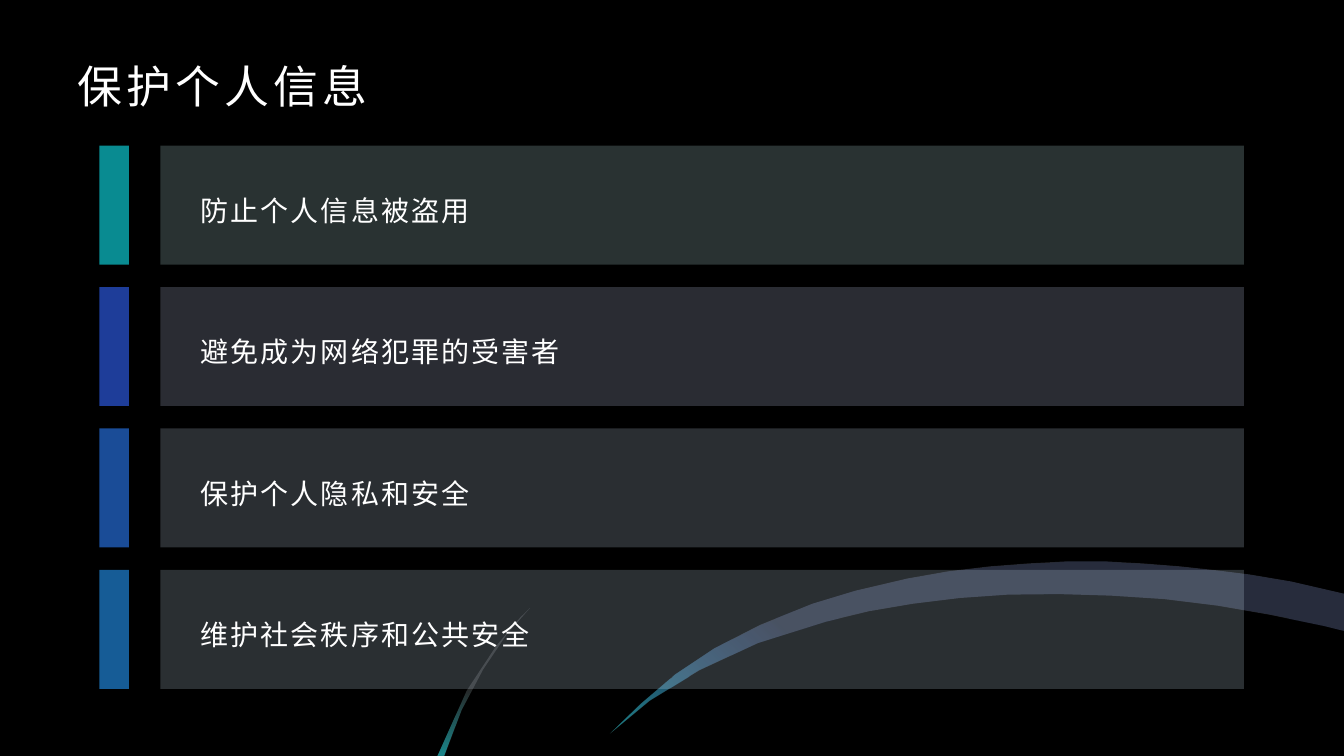
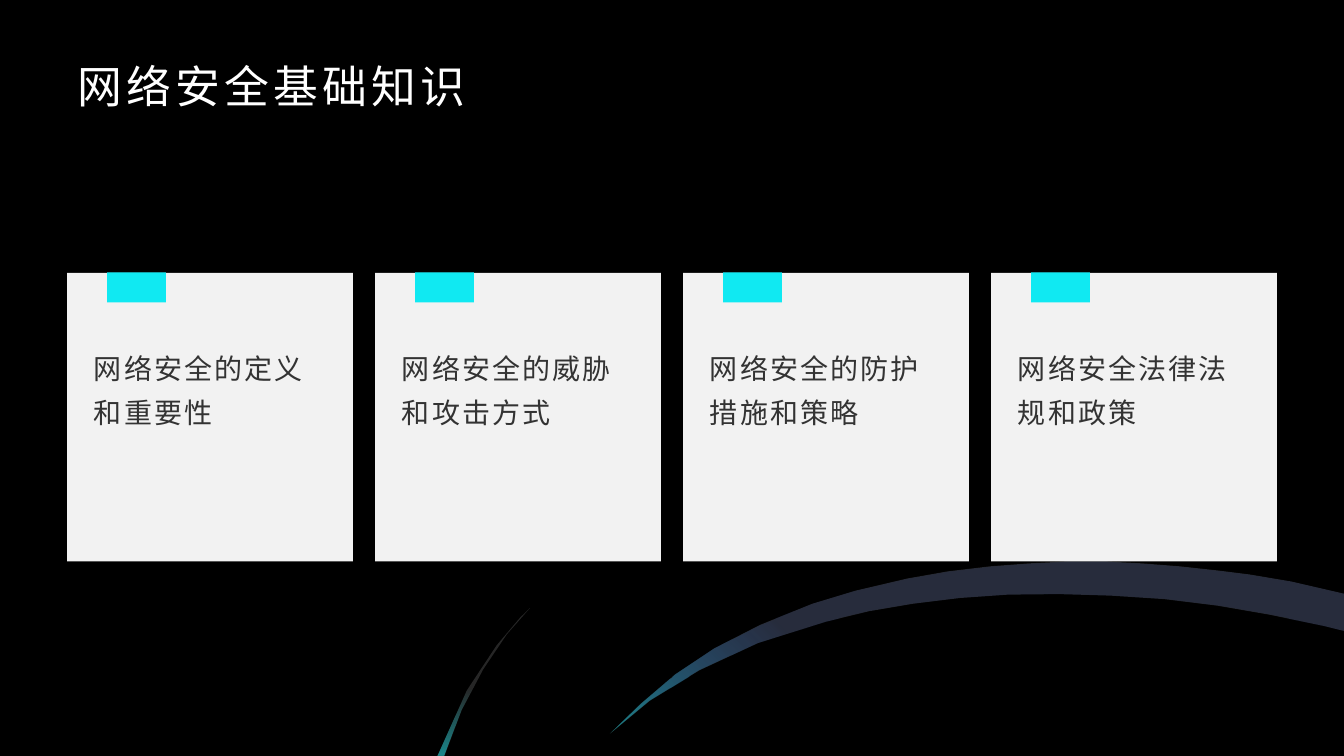
"""Build two slides on network security with a shared dark layout."""
from lxml.etree import SubElement
from pptx import Presentation
from pptx.dml.color import RGBColor
from pptx.enum.shapes import MSO_SHAPE
from pptx.enum.text import MSO_ANCHOR, MSO_AUTO_SIZE, PP_ALIGN
from pptx.oxml.ns import qn
from pptx.util import Pt

BLACK = RGBColor(0x00, 0x00, 0x00)
WHITE = RGBColor(0xFF, 0xFF, 0xFF)
CHARCOAL = RGBColor(0x26, 0x26, 0x26)
INK = RGBColor(0x33, 0x33, 0x33)
CARD_GREY = RGBColor(0xF2, 0xF2, 0xF2)
CYAN = RGBColor(0x10, 0xE9, 0xF2)
BLUE = RGBColor(0x33, 0x66, 0xFF)
SKY = RGBColor(0x2C, 0x80, 0xFC)
AZURE = RGBColor(0x25, 0x9A, 0xFA)
PALE_CYAN = RGBColor(0xCF, 0xFB, 0xFC)
PALE_BLUE = RGBColor(0xD6, 0xE0, 0xFF)
PALE_SKY = RGBColor(0xD5, 0xE6, 0xFE)
PALE_AZURE = RGBColor(0xD3, 0xEB, 0xFE)
GLOW = RGBColor(0x1E, 0xB5, 0xF7)

TITLE_FRAME = {
    "word_wrap": True, "auto_size": MSO_AUTO_SIZE.NONE,
    "vertical_anchor": MSO_ANCHOR.BOTTOM,
    "margin_left": Pt(7.2), "margin_right": Pt(7.2),
    "margin_top": 0, "margin_bottom": 0,
}
TITLE_BOX = {"left": Pt(48), "top": Pt(36), "width": Pt(864), "height": Pt(44.6)}
TITLE_FONT = {"name": "Cabin", "size": Pt(32)}
BODY_FONT = {"name": "Lato", "size": Pt(20)}

WIDE_ARC = [
    (435.6, 524.2), (457.9, 502.6), (482.4, 481.7), (510.5, 463), (542.9, 446.4),
    (580.3, 431.3), (611.3, 421.9), (648, 413.3), (676.8, 408.2), (707, 404.6),
    (734.4, 402.5), (762.5, 401), (789.1, 401), (816.5, 402.5), (843.1, 404.6),
    (869.8, 407.5), (892.8, 410.4), (922.3, 415.4), (960, 424.1),
    (960, 450.7), (945.4, 447.1), (907.2, 439.2), (869.8, 432.7), (831.6, 428),
    (793.4, 425.5), (756.2, 424.4), (720, 424.8), (685.6, 427.2), (652.3, 431.3),
    (620.5, 436.7), (589.7, 444.2), (541.4, 459.4), (499.7, 478.8), (464.4, 500.4),
]
SMALL_ARC = [
    (378.7, 434.2), (362, 453.2), (345.2, 478.1), (329.8, 507.3), (317.5, 540),
    (312.5, 540), (333.4, 493.3), (354.7, 461.1), (371.7, 441),
]


def add_block(slide, color, left, top, width, height, alpha=100):
    block = slide.shapes.add_shape(
        MSO_SHAPE.RECTANGLE, Pt(left), Pt(top), Pt(width), Pt(height))
    block.shadow.inherit = False
    block.fill.solid()
    block.fill.fore_color.rgb = color
    block.line.fill.background()
    if alpha < 100:
        for tone in block.element.spPr.iter(qn("a:srgbClr")):
            SubElement(tone, qn("a:alpha"), val=str(alpha * 1000))


def write(box, text, font, color, tracking, line_spacing=1.0):
    paragraph = box.text_frame.paragraphs[0]
    paragraph.alignment = PP_ALIGN.LEFT
    paragraph.line_spacing = line_spacing
    run = paragraph.add_run()
    run.text = text
    for key, value in font.items():
        setattr(run.font, key, value)
    run.font.color.rgb = color
    for properties in box.element.iter(qn("a:rPr")):
        properties.set("spc", str(tracking))


presentation = Presentation()
presentation.slide_width = Pt(960)
presentation.slide_height = Pt(540)
background = presentation.slide_master.background.fill
background.solid()
background.fore_color.rgb = BLACK
layout = presentation.slide_layouts[5]
for footer in list(layout.placeholders)[1:]:
    footer.element.getparent().remove(footer.element)

slides = []
for heading in ("保护个人信息", "网络安全基础知识"):
    slide = presentation.slides.add_slide(layout)
    title = slide.shapes.title
    for key, value in TITLE_BOX.items():
        setattr(title, key, value)
    for key, value in TITLE_FRAME.items():
        setattr(title.text_frame, key, value)
    write(title, heading, TITLE_FONT, WHITE, 300)
    slides.append(slide)
privacy, basics = slides

arcs = []
for outline, angle, stops in (
    (WIDE_ARC, None, None),
    (SMALL_ARC, None, None),
    (WIDE_ARC, 45, ((0, CYAN, 50), (0.31, BLUE, 10))),
    (SMALL_ARC, 270, ((0.55, CYAN, 0), (1, CYAN, 50))),
):
    points = [(Pt(x), Pt(y)) for x, y in outline]
    builder = privacy.shapes.build_freeform(*points[0])
    builder.add_line_segments(points[1:], close=True)
    arc = builder.convert_to_shape()
    arc.shadow.inherit = False
    arc.line.fill.background()
    if stops:
        arc.fill.gradient()
        arc.fill.gradient_angle = angle
        for stop, (position, color, alpha) in zip(arc.fill.gradient_stops, stops):
            stop.position = position
            stop.color.rgb = color
        tones = list(arc.element.spPr.iter(qn("a:srgbClr")))
        for tone, (position, color, alpha) in zip(tones, stops):
            SubElement(tone, qn("a:alpha"), val=str(alpha * 1000))
    else:
        arc.fill.solid()
        arc.fill.fore_color.rgb = CHARCOAL
    arcs.append(arc)

effects = arcs[-1].element.spPr.find(qn("a:effectLst"))
halo = SubElement(effects, qn("a:outerShdw"), blurRad=str(Pt(100)), dist="0", dir="0")
halo_tone = SubElement(halo, qn("a:srgbClr"), val=str(GLOW))
SubElement(halo_tone, qn("a:alpha"), val="20000")
for arc in arcs:
    layout.shapes.element.append(arc.element)

REASONS = (
    ("防止个人信息被盗用", CYAN, PALE_CYAN),
    ("避免成为网络犯罪的受害者", BLUE, PALE_BLUE),
    ("保护个人隐私和安全", SKY, PALE_SKY),
    ("维护社会秩序和公共安全", AZURE, PALE_AZURE),
)
for index, (reason, accent, tint) in enumerate(REASONS):
    top = 104 + index * 101
    add_block(privacy, tint, 114.5, top, 774, 85, 20)
    add_block(privacy, accent, 71, top, 21, 85, 60)
    label = privacy.shapes.add_textbox(Pt(136), Pt(top + 7.25), Pt(741), Pt(70.5))
    label.text_frame.word_wrap = True
    label.text_frame.vertical_anchor = MSO_ANCHOR.MIDDLE
    write(label, reason, BODY_FONT, WHITE, 150, 1.3)

TOPICS = (
    "网络安全的定义和重要性",
    "网络安全的威胁和攻击方式",
    "网络安全的防护措施和策略",
    "网络安全法律法规和政策",
)
for index, topic in enumerate(TOPICS):
    left = 48 + index * 220
    add_block(basics, CARD_GREY, left, 195, 204, 206)
    add_block(basics, CYAN, left + 28.5, 194.5, 42, 21.5)
    label = basics.shapes.add_textbox(Pt(left + 12), Pt(240.5), Pt(179), Pt(145))
    label.text_frame.word_wrap = True
    write(label, topic, BODY_FONT, INK, 150, 1.3)

presentation.save("out.pptx")
